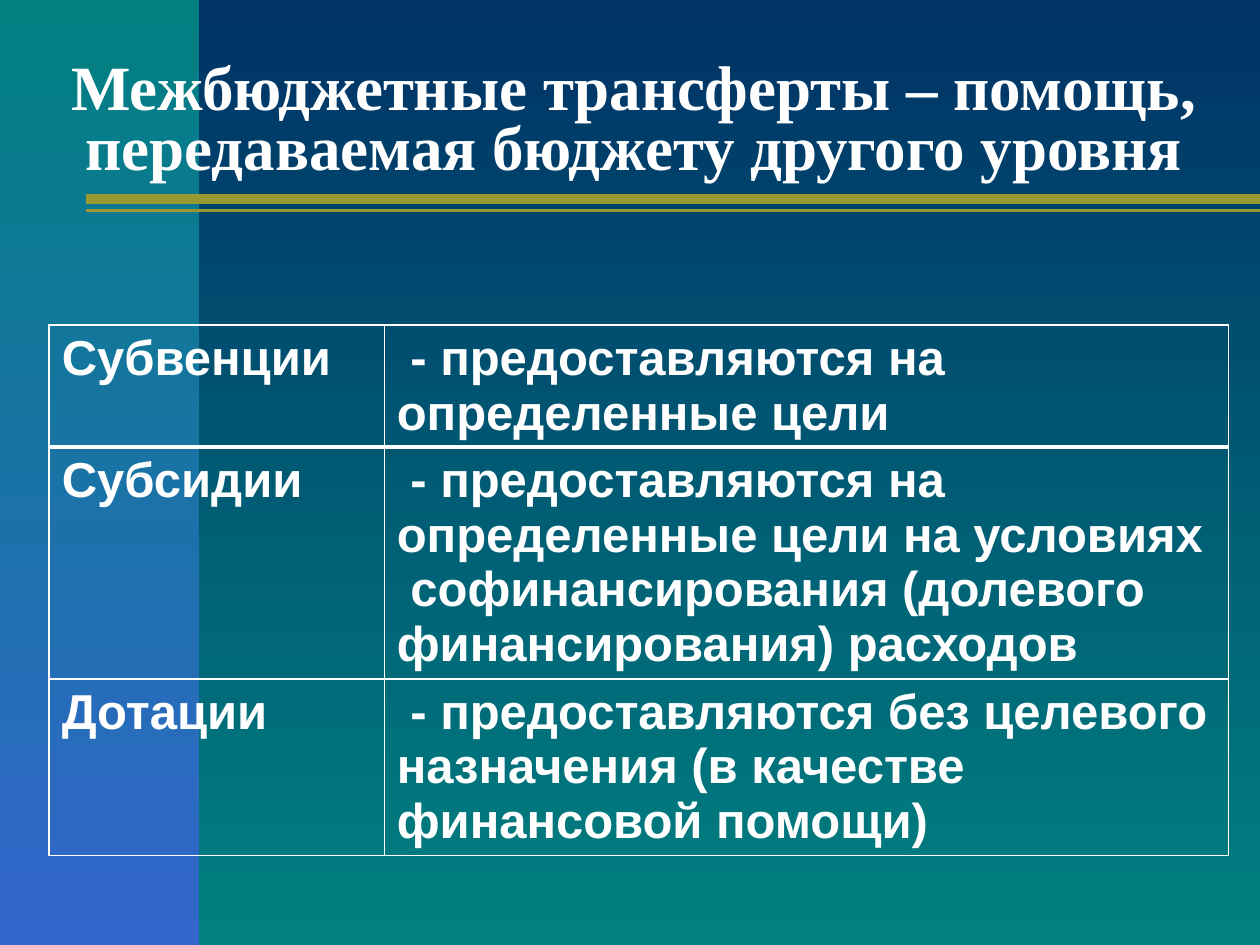
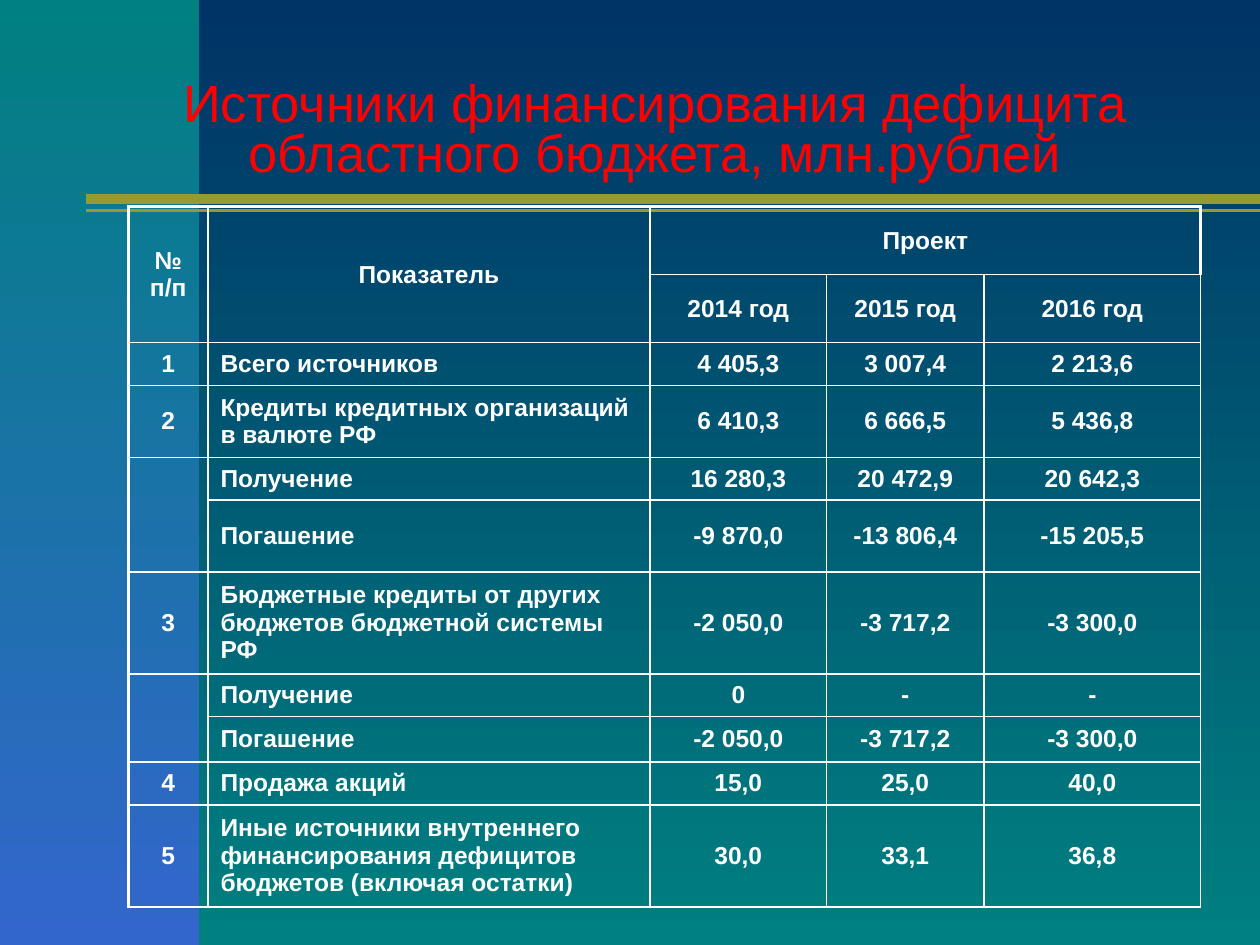
from lxml.etree import SubElement
from pptx import Presentation
from pptx.dml.color import RGBColor
from pptx.enum.shapes import MSO_CONNECTOR as Connector, MSO_SHAPE as Preset
from pptx.enum.text import MSO_ANCHOR as Anchor, MSO_AUTO_SIZE as AutoSize, PP_ALIGN as Align
from pptx.oxml import parse_xml
from pptx.oxml.ns import nsdecls, qn
from pptx.util import Inches, Pt

COLUMNS, ROWS = 100, 75
WHITE, RED, NAVY, TEAL, BLUE, OLIVE = "FFFFFF", "FF0000", "003366", "008080", "3366CC", "999933"


def color(value):
    return RGBColor.from_string(value)


class Deck:
    def __init__(self):
        self.presentation = Presentation()
        self.presentation.slide_width = Inches(10)
        self.presentation.slide_height = Inches(7.5)
        self.slide = None

    def across(self, columns):
        return round(self.presentation.slide_width * columns / COLUMNS)

    def down(self, rows):
        return round(self.presentation.slide_height * rows / ROWS)

    def box(self, left, top, width, height):
        return self.across(left), self.down(top), self.across(width), self.down(height)

    def gradient(self, fill, start, end):
        fill.gradient()
        fill.gradient_angle = 270
        for stop, value, position in zip(fill.gradient_stops, (start, end), (0, 1)):
            stop.color.rgb = color(value)
            stop.position = position

    def new_slide(self):
        self.slide = self.presentation.slides.add_slide(self.presentation.slide_layouts[5])
        self.gradient(self.slide.background.fill, NAVY, TEAL)
        self.side_band()
        self.rule(16.7, 2)
        self.rule(15.8, 6)

    def side_band(self):
        band = self.slide.shapes.add_shape(Preset.RECTANGLE, *self.box(0, 0, 15.8, ROWS))
        band.shadow.inherit = False
        band.line.fill.background()
        self.gradient(band.fill, TEAL, BLUE)

    def rule(self, row, width):
        line = self.slide.shapes.add_connector(
            Connector.STRAIGHT, self.across(6.8), self.down(row), self.across(COLUMNS), self.down(row))
        line.line.color.rgb = color(OLIVE)
        line.line.width = Pt(width)
        SubElement(line._element.spPr, qn("a:effectLst"))

    def style(self, paragraph, size, value, name="Arial", bold=True):
        font = paragraph.font
        font.size, font.name, font.bold = Pt(size), name, bold
        font.color.rgb = color(value)

    def title(self, text, left, width, size, value, name, bold):
        title = self.slide.shapes.title
        self.slide.shapes._spTree.append(title._element)
        title.left, title.top, title.width, title.height = self.box(left, 2.9, width, 12.1)
        frame = title.text_frame
        frame.text = text
        frame.word_wrap = True
        frame.auto_size = AutoSize.NONE
        frame.vertical_anchor = Anchor.BOTTOM
        paragraph = frame.paragraphs[0]
        paragraph.alignment = Align.CENTER
        paragraph.line_spacing = 0.8
        self.style(paragraph, size, value, name, bold)
        paragraph.runs[0]._r.get_or_add_rPr().append(parse_xml(
            f'<a:effectLst {nsdecls("a")}><a:outerShdw blurRad="38100" dist="38100" dir="2700000">'
            '<a:srgbClr val="000000"/></a:outerShdw></a:effectLst>'))

    def borders(self, cell, widths):
        properties = cell._tc.get_or_add_tcPr()
        for index, edge in enumerate("LRTB"):
            width = Pt(widths.get(edge, 1))
            properties.insert(index, parse_xml(
                f'<a:ln{edge} {nsdecls("a")} w="{width}"><a:solidFill>'
                f'<a:srgbClr val="{WHITE}"/></a:solidFill></a:ln{edge}>'))

    def table(self, left, top, widths, heights, rows, size, heavy,
              merges=(), anchor=Anchor.TOP, centered=lambda row, column: False, before=0):
        area = self.box(left, top, sum(widths), sum(heights))
        table = self.slide.shapes.add_table(len(rows), len(widths), *area).table
        table.first_row = table.horz_banding = False
        for column, width in zip(table.columns, widths):
            column.width = self.across(width)
        for row, height in zip(table.rows, heights):
            row.height = self.down(height)
        for row, texts in enumerate(rows):
            for column, text in enumerate(texts):
                cell = table.cell(row, column)
                cell.fill.background()
                cell.vertical_anchor = anchor
                self.borders(cell, heavy(row, column))
                cell.text = text
                paragraph = cell.text_frame.paragraphs[0]
                paragraph.space_before = Pt(before)
                paragraph.alignment = Align.CENTER if centered(row, column) else Align.LEFT
                self.style(paragraph, size, WHITE)
        for first, last in merges:
            table.cell(*first).merge(table.cell(*last))


def transfers(deck):
    deck.new_slide()
    deck.title("Межбюджетные трансферты – помощь, передаваемая бюджету другого уровня",
               3.1, 94.4, 36, WHITE, "Times New Roman", True)
    rows = [
        ("Субвенции", " - предоставляются на определенные цели"),
        ("Субсидии", " - предоставляются на определенные цели на условиях  софинансирования "
                     "(долевого финансирования) расходов"),
        ("Дотации", " - предоставляются без целевого назначения (в качестве финансовой помощи)"),
    ]
    deck.table(3.9, 25.8, (26.6, 67), (9.6, 18.4, 14), rows, 28,
               heavy=lambda row, column: {"B": 3} if row == 0 else {})


def deficit_sources(deck):
    deck.new_slide()
    deck.title("Источники финансирования дефицита областного бюджета, млн.рублей",
               6.5, 91, 30, RED, "Arial", False)
    rows = [
        ("№ п/п", "Показатель", "Проект", "", ""),
        ("", "", "2014 год", "2015 год", "2016 год"),
        ("1", "Всего источников", "4 405,3", "3 007,4", "2 213,6"),
        ("2", "Кредиты кредитных организаций в валюте РФ", "6 410,3", "6 666,5", "5 436,8"),
        ("", "Получение", "16 280,3", "20 472,9", "20 642,3"),
        ("", "Погашение", "-9 870,0", "-13 806,4", "-15 205,5"),
        ("3", "Бюджетные кредиты от других бюджетов бюджетной системы РФ",
         "-2 050,0", "-3 717,2", "-3 300,0"),
        ("", "Получение", "0", "-", "-"),
        ("", "Погашение", "-2 050,0", "-3 717,2", "-3 300,0"),
        ("4", "Продажа акций", "15,0", "25,0", "40,0"),
        ("5", "Иные источники внутреннего финансирования дефицитов бюджетов (включая остатки)",
         "30,0", "33,1", "36,8"),
    ]

    def outline(row, column):
        edges = {"L": column == 0, "T": row == 0, "R": row == 0 and column >= 2}
        return {edge: 2.25 for edge, thick in edges.items() if thick}

    deck.table(10.2, 16.4, (6.3, 35.1, 14, 12.5, 17.2),
               (5.4, 5.4, 3.4, 5.7, 3.4, 5.7, 8.1, 3.4, 3.6, 3.4, 8.1), rows, 14,
               heavy=outline, anchor=Anchor.MIDDLE, before=2.8,
               merges=[((0, 0), (1, 0)), ((0, 1), (1, 1)), ((0, 2), (0, 4)),
                       ((4, 0), (5, 0)), ((7, 0), (8, 0))],
               centered=lambda row, column: row < 2 or column != 1)


def main():
    deck = Deck()
    transfers(deck)
    deficit_sources(deck)
    deck.presentation.save("out.pptx")


if __name__ == "__main__":
    main()
